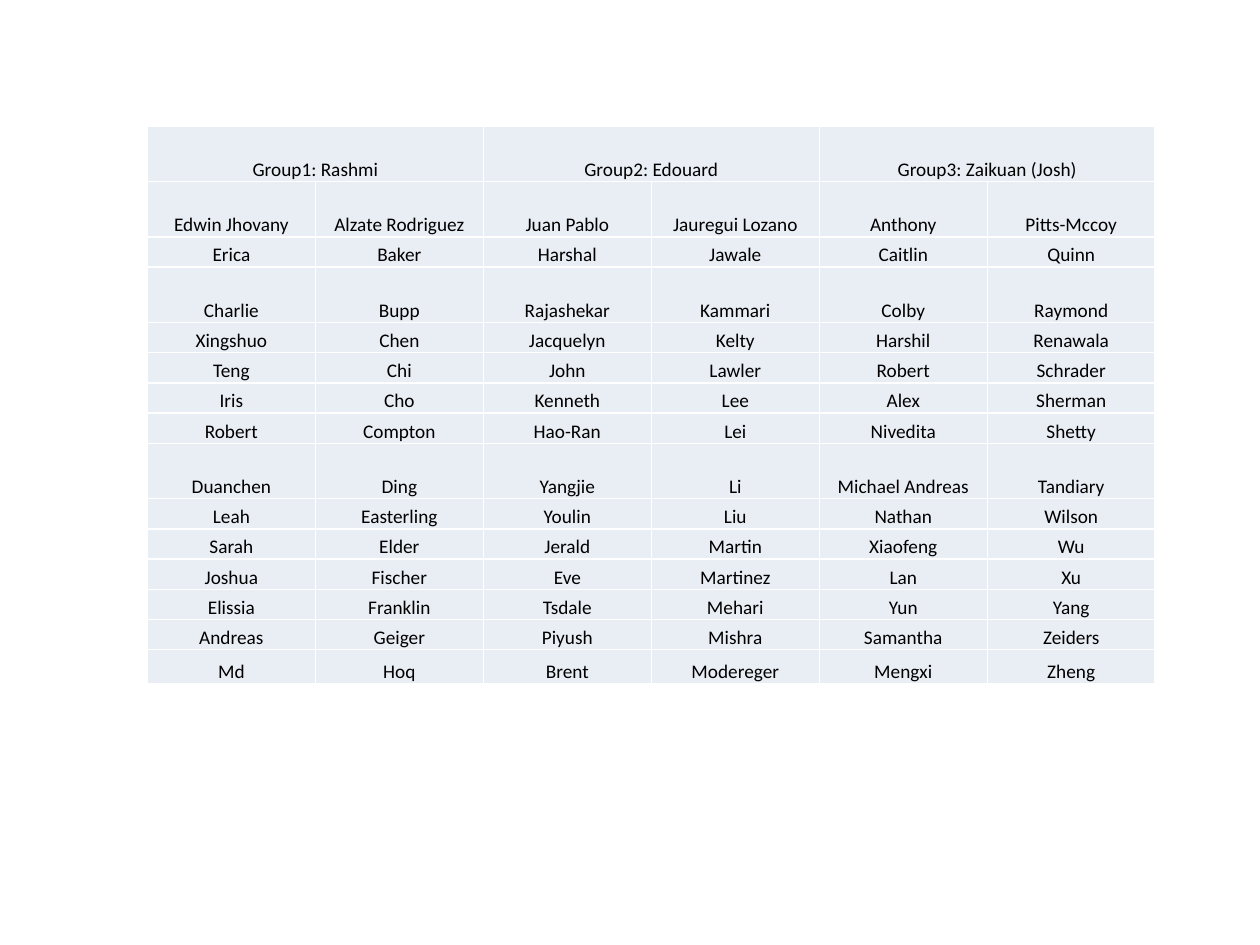
from lxml import etree
from pptx import Presentation
from pptx.dml.color import RGBColor
from pptx.enum.text import MSO_ANCHOR, PP_ALIGN
from pptx.oxml.ns import qn
from pptx.util import Inches, Pt

BOTTOM = MSO_ANCHOR.BOTTOM
CENTER = PP_ALIGN.CENTER
BLACK = RGBColor(0x00, 0x00, 0x00)
WHITE = RGBColor(0xFF, 0xFF, 0xFF)
PALE_BLUE = RGBColor(0xE9, 0xED, 0xF4)

BLANK_LAYOUT = 6
TABLE_LEFT, TABLE_TOP, TABLE_WIDTH = 1.17, 1, 8
TALL_ROW, SHORT_ROW, LAST_ROW = 0.44, 0.24, 0.27
TALL_ROWS = {0, 1, 3, 8}

CELL_FORMAT = {
    "vertical_anchor": BOTTOM,
    "margin_left": Inches(0.01),
    "margin_right": Inches(0.01),
    "margin_top": Inches(0.01),
    "margin_bottom": 0,
}
FONT_FORMAT = {"name": "Calibri", "size": Pt(11), "bold": False}

GROUPS = ["Group1: Rashmi", "Group2: Edouard", "Group3: Zaikuan (Josh)"]
MEMBERS = [
    ["Edwin Jhovany", "Alzate Rodriguez", "Juan Pablo", "Jauregui Lozano", "Anthony", "Pitts-Mccoy"],
    ["Erica", "Baker", "Harshal", "Jawale", "Caitlin", "Quinn"],
    ["Charlie", "Bupp", "Rajashekar", "Kammari", "Colby", "Raymond"],
    ["Xingshuo", "Chen", "Jacquelyn", "Kelty", "Harshil", "Renawala"],
    ["Teng", "Chi", "John", "Lawler", "Robert", "Schrader"],
    ["Iris", "Cho", "Kenneth", "Lee", "Alex", "Sherman"],
    ["Robert", "Compton", "Hao-Ran", "Lei", "Nivedita", "Shetty"],
    ["Duanchen", "Ding", "Yangjie", "Li", "Michael Andreas", "Tandiary"],
    ["Leah", "Easterling", "Youlin", "Liu", "Nathan", "Wilson"],
    ["Sarah", "Elder", "Jerald", "Martin", "Xiaofeng", "Wu"],
    ["Joshua", "Fischer", "Eve", "Martinez", "Lan", "Xu"],
    ["Elissia", "Franklin", "Tsdale", "Mehari", "Yun", "Yang"],
    ["Andreas", "Geiger", "Piyush", "Mishra", "Samantha", "Zeiders"],
    ["Md", "Hoq", "Brent", "Modereger", "Mengxi", "Zheng"],
]


def set_format(target, values):
    for name, value in values.items():
        setattr(target, name, value)


def add_borders(cell):
    """Draw the four sides; call before the fill, which must follow them in the XML."""
    properties = cell._tc.get_or_add_tcPr()
    for side in ("a:lnL", "a:lnR", "a:lnT", "a:lnB"):
        line = etree.SubElement(properties, qn(side), w=str(Pt(1)))
        fill = etree.SubElement(line, qn("a:solidFill"))
        etree.SubElement(fill, qn("a:srgbClr"), val=str(WHITE))


def style_cell(cell):
    set_format(cell, CELL_FORMAT)
    add_borders(cell)
    cell.fill.solid()
    cell.fill.fore_color.rgb = PALE_BLUE


def write_cell(cell, text):
    paragraph = cell.text_frame.paragraphs[0]
    paragraph.alignment = CENTER
    run = paragraph.add_run()
    run.text = text
    set_format(run.font, FONT_FORMAT)
    run.font.color.rgb = BLACK


def row_heights():
    count = len(MEMBERS) + 1
    heights = [TALL_ROW if row in TALL_ROWS else SHORT_ROW for row in range(count)]
    heights[-1] = LAST_ROW
    return heights


def add_group_table(slide):
    heights = row_heights()
    table = slide.shapes.add_table(
        len(heights), 2 * len(GROUPS), Inches(TABLE_LEFT), Inches(TABLE_TOP),
        Inches(TABLE_WIDTH), Inches(sum(heights)),
    ).table
    set_format(table, {"first_row": False, "horz_banding": False})
    for row, height in zip(table.rows, heights):
        row.height = Inches(height)
    for cell in table.iter_cells():
        style_cell(cell)

    for index, group in enumerate(GROUPS):
        heading = table.cell(0, 2 * index)
        heading.merge(table.cell(0, 2 * index + 1))
        write_cell(heading, group)
    for row, names in enumerate(MEMBERS, start=1):
        for column, name in enumerate(names):
            write_cell(table.cell(row, column), name)


def main():
    presentation = Presentation()
    presentation.slide_width = Inches(10)
    presentation.slide_height = Inches(7.5)
    slide = presentation.slides.add_slide(presentation.slide_layouts[BLANK_LAYOUT])
    add_group_table(slide)
    presentation.save("out.pptx")


if __name__ == "__main__":
    main()
